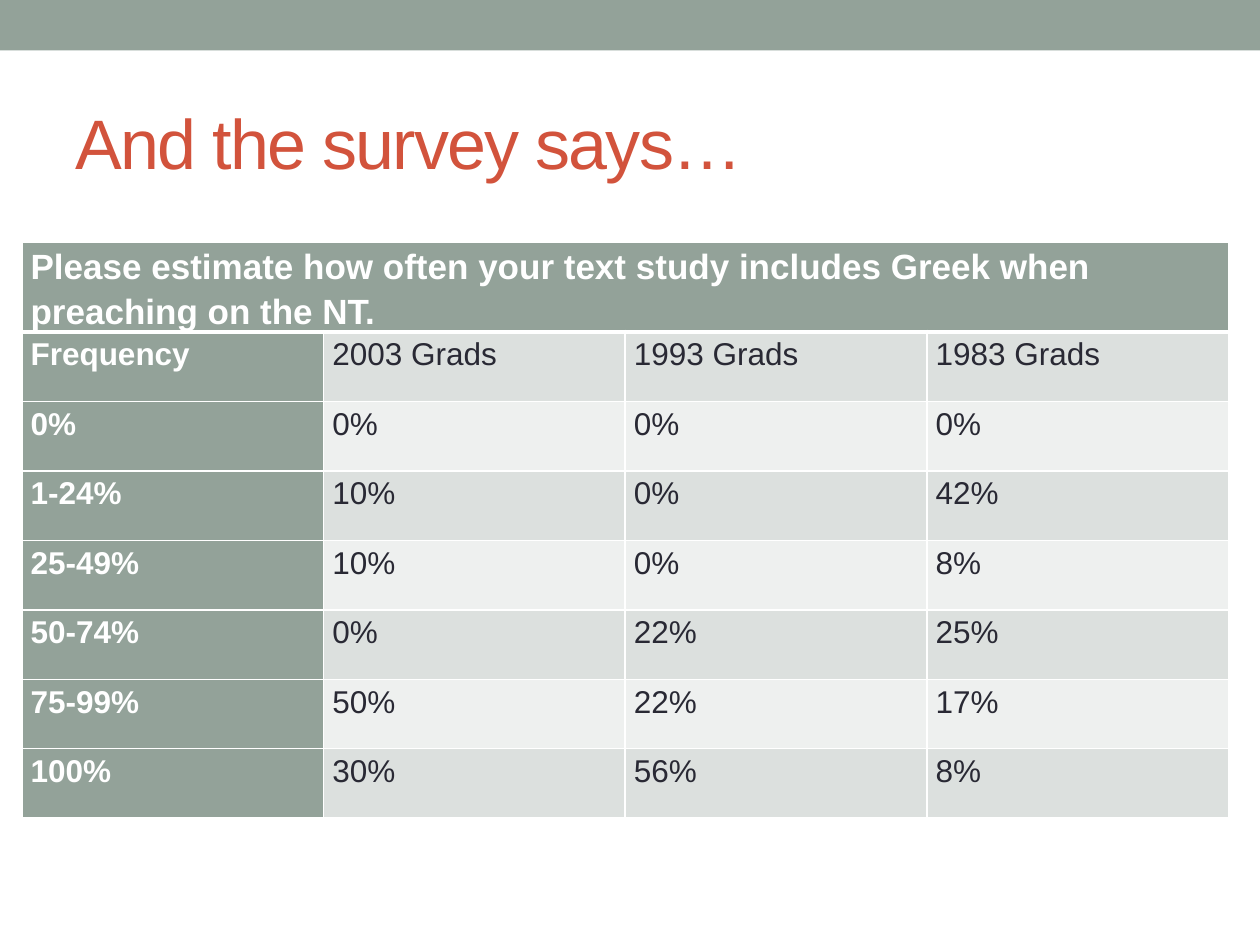
from lxml import etree
from pptx import Presentation
from pptx.dml.color import RGBColor
from pptx.enum.shapes import MSO_SHAPE
from pptx.enum.text import MSO_ANCHOR, PP_ALIGN
from pptx.oxml.ns import qn
from pptx.util import Pt

RECTANGLE = MSO_SHAPE.RECTANGLE
MIDDLE = MSO_ANCHOR.MIDDLE
LEFT = PP_ALIGN.LEFT

SAGE = RGBColor(0x93, 0xA2, 0x99)
BAND_DARK = RGBColor(0xDC, 0xE0, 0xDE)
BAND_LIGHT = RGBColor(0xEE, 0xF0, 0xEF)
RED = RGBColor(0xD2, 0x53, 0x3C)
INK = RGBColor(0x29, 0x29, 0x34)
WHITE = RGBColor(0xFF, 0xFF, 0xFF)
FONT = "Arial"

QUESTION = ("Please estimate how often your text study includes Greek "
            "when preaching on the NT.")
ROWS = [
    (QUESTION, "", "", ""),
    ("Frequency", "2003 Grads", "1993 Grads", "1983 Grads"),
    ("0%", "0%", "0%", "0%"),
    ("1-24%", "10%", "0%", "42%"),
    ("25-49%", "10%", "0%", "8%"),
    ("50-74%", "0%", "22%", "25%"),
    ("75-99%", "50%", "22%", "17%"),
    ("100%", "30%", "56%", "8%"),
]
COL_WIDTH, ROW_HEIGHT = Pt(172.4), Pt(39.7)


def add_border(cell, side, width):
    ln = etree.SubElement(cell._tc.get_or_add_tcPr(), qn("a:ln" + side), w=str(width))
    fill = etree.SubElement(ln, qn("a:solidFill"))
    etree.SubElement(fill, qn("a:srgbClr"), val=str(WHITE))


prs = Presentation()
prs.slide_width, prs.slide_height = Pt(720), Pt(540)
s = prs.slides.add_slide(prs.slide_layouts[5])

# Top bar
bar = s.shapes.add_shape(RECTANGLE, 0, 0, prs.slide_width, Pt(28.8))
bar.shadow.inherit = False
bar.fill.solid()
bar.fill.fore_color.rgb = SAGE
bar.line.fill.background()

# Title
title = s.shapes.title
title.left, title.top, title.width, title.height = Pt(36), Pt(42), Pt(648), Pt(78)
tf = title.text_frame
tf.text = "And the survey says…"
tf.vertical_anchor = MIDDLE
p = tf.paragraphs[0]
p.alignment = LEFT
p.font.name, p.font.size, p.font.color.rgb = FONT, Pt(40), RED
p.runs[0].font._element.set("spc", "-100")

# Survey table
table = s.shapes.add_table(len(ROWS), len(ROWS[0]), Pt(12.5), Pt(138.4),
                           COL_WIDTH * len(ROWS[0]), ROW_HEIGHT * len(ROWS)).table
for column in table.columns:
    column.width = COL_WIDTH
table.cell(0, 0).merge(table.cell(0, len(ROWS[0]) - 1))

for i, values in enumerate(ROWS):
    table.rows[i].height = ROW_HEIGHT
    for j, value in enumerate(values):
        cell = table.cell(i, j)
        heading = i == 0 or j == 0
        cell.margin_left = cell.margin_right = Pt(5)
        cell.margin_top = cell.margin_bottom = 0
        # The question row is set off by a thicker rule
        for side, thick in (("L", False), ("R", False), ("T", i == 1), ("B", i == 0)):
            add_border(cell, side, Pt(3 if thick else 1))
        cell.fill.solid()
        cell.fill.fore_color.rgb = SAGE if heading else BAND_DARK if i % 2 else BAND_LIGHT
        if cell.is_spanned:
            continue
        cell.text = value
        p = cell.text_frame.paragraphs[0]
        p.line_spacing = 1.15
        p.font.name, p.font.size = FONT, Pt(18 if i else 20)
        p.font.bold = heading
        p.font.color.rgb = WHITE if heading else INK

prs.save("out.pptx")
